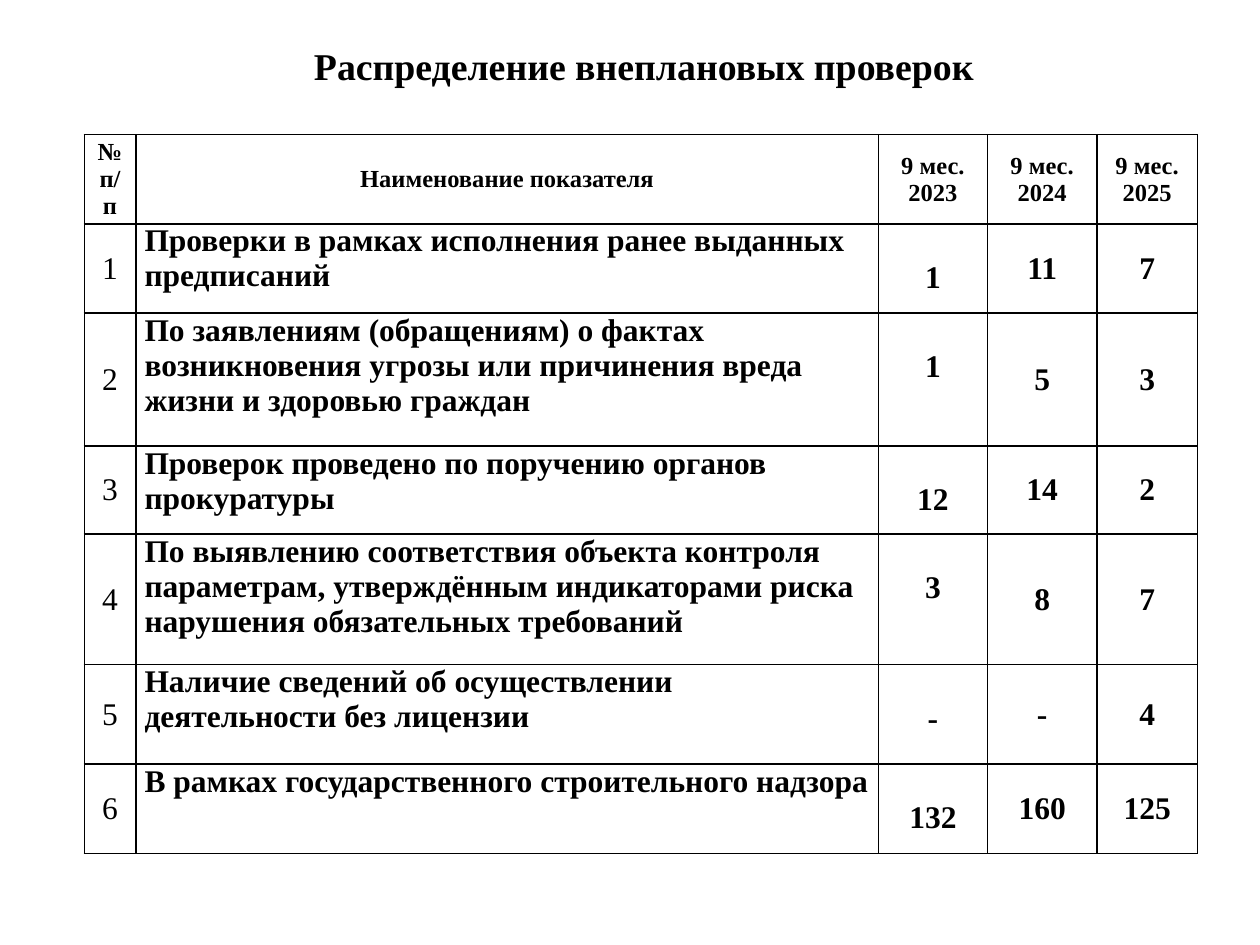
"""Build the slide on the distribution of unscheduled inspections."""
from dataclasses import dataclass

from lxml import etree
from pptx import Presentation
from pptx import util as u
from pptx.dml import color
from pptx.enum import text
from pptx.oxml import ns


@dataclass(frozen=True)
class Theme:
    font: str = "Times New Roman"
    ink: str = "000000"
    paper: str = "FFFFFF"
    title_size: float = 21.6
    header_size: float = 14
    body_size: float = 18
    border: float = 1


CENTER, LEFT = text.PP_ALIGN.CENTER, text.PP_ALIGN.LEFT
TOP, MIDDLE = text.MSO_ANCHOR.TOP, text.MSO_ANCHOR.MIDDLE
INSETS = {"margin_left": u.Pt(5), "margin_right": u.Pt(5), "margin_top": 0, "margin_bottom": 0}
CENTERED_CELL = {**INSETS, "vertical_anchor": MIDDLE}
TOP_CELL = {**INSETS, "vertical_anchor": TOP}
LOWERED_CELL = {**TOP_CELL, "margin_top": u.Pt(20.7)}
CENTERED = {"alignment": CENTER}
NUMBER = {"alignment": CENTER, "space_after": u.Pt(6)}
INDICATOR = {"alignment": LEFT, "space_after": u.Pt(6)}

COLUMN_WIDTHS = (29.4, 424.4, 62.3, 62.6, 57.4)
ROW_HEIGHTS = (50.9, 51.1, 76, 50.3, 74.6, 56.9, 50.9)
HEADER = ("№ п/п", "Наименование показателя", "9 мес. 2023", "9 мес. 2024", "9 мес. 2025")
INSPECTIONS = (
    ("Проверки в рамках исполнения ранее выданных предписаний", "1", "11", "7"),
    ("По заявлениям (обращениям) о фактах возникновения угрозы или причинения вреда "
     "жизни и здоровью граждан", "1", "5", "3"),
    ("Проверок проведено по поручению органов прокуратуры", "12", "14", "2"),
    ("По выявлению соответствия объекта контроля параметрам, утверждённым индикаторами "
     "риска нарушения обязательных требований", "3", "8", "7"),
    ("Наличие сведений об осуществлении деятельности без лицензии", "-", "-", "4"),
    ("В рамках государственного строительного надзора", "132", "160", "125"),
)
BODY_FORMATS = (
    (CENTERED_CELL, NUMBER, False),
    (TOP_CELL, INDICATOR, True),
    (LOWERED_CELL, CENTERED, True),
    (CENTERED_CELL, CENTERED, True),
    (CENTERED_CELL, CENTERED, True),
)


def apply(target, values):
    for name, value in values.items():
        setattr(target, name, value)


class SlideBuilder:
    def __init__(self, slide, theme):
        self.slide = slide
        self.theme = theme
        self.paint(slide.background.fill, theme.paper)

    def paint(self, fill, shade):
        fill.solid()
        fill.fore_color.rgb = color.RGBColor.from_string(shade)

    def add_text(self, frame, wording, size, layout, bold=True):
        paragraph = frame.paragraphs[0]
        apply(paragraph, layout)
        run = paragraph.add_run()
        run.text = wording
        apply(run.font, {"name": self.theme.font, "size": u.Pt(size), "bold": bold})
        run.font.color.rgb = color.RGBColor.from_string(self.theme.ink)

    def title(self, wording, left, top, width, height):
        shape = self.slide.shapes.title
        apply(shape, {"left": u.Pt(left), "top": u.Pt(top),
                      "width": u.Pt(width), "height": u.Pt(height)})
        apply(shape.text_frame, {
            "vertical_anchor": MIDDLE, "word_wrap": True,
            "auto_size": text.MSO_AUTO_SIZE.NONE,
            "margin_top": 0, "margin_bottom": u.Pt(24)})
        self.add_text(shape.text_frame, wording, self.theme.title_size, CENTERED)

    def borders(self, cell):
        properties = cell._tc.get_or_add_tcPr()
        for index, side in enumerate(("a:lnL", "a:lnR", "a:lnT", "a:lnB")):
            line = etree.Element(ns.qn(side), w=str(u.Pt(self.theme.border)))
            fill = etree.SubElement(line, ns.qn("a:solidFill"))
            etree.SubElement(fill, ns.qn("a:srgbClr"), val=self.theme.ink)
            properties.insert(index, line)

    def cell(self, cell, wording, size, placement, layout, bold):
        apply(cell, placement)
        cell.fill.background()
        self.borders(cell)
        self.add_text(cell.text_frame, wording, size, layout, bold)

    def table(self, left, top):
        table = self.slide.shapes.add_table(
            len(ROW_HEIGHTS), len(COLUMN_WIDTHS), u.Pt(left), u.Pt(top),
            u.Pt(sum(COLUMN_WIDTHS)), u.Pt(sum(ROW_HEIGHTS))).table
        apply(table, {"first_row": False, "horz_banding": False})
        for column, width in zip(table.columns, COLUMN_WIDTHS):
            column.width = u.Pt(width)
        for row, height in zip(table.rows, ROW_HEIGHTS):
            row.height = u.Pt(height)
        for index, wording in enumerate(HEADER):
            self.cell(table.cell(0, index), wording, self.theme.header_size,
                      CENTERED_CELL, CENTERED, True)
        for number, inspection in enumerate(INSPECTIONS, 1):
            wordings = (str(number), *inspection)
            for index, (wording, formats) in enumerate(zip(wordings, BODY_FORMATS)):
                self.cell(table.cell(number, index), wording, self.theme.body_size, *formats)


def main():
    presentation = Presentation()
    apply(presentation, {"slide_width": u.Pt(720), "slide_height": u.Pt(540)})
    slide = presentation.slides.add_slide(presentation.slide_layouts.get_by_name("Title Only"))
    builder = SlideBuilder(slide, Theme())
    builder.title("Распределение внеплановых проверок", 36, 21.6, 664, 55.4)
    builder.table(48.2, 77)
    presentation.save("out.pptx")


if __name__ == "__main__":
    main()
